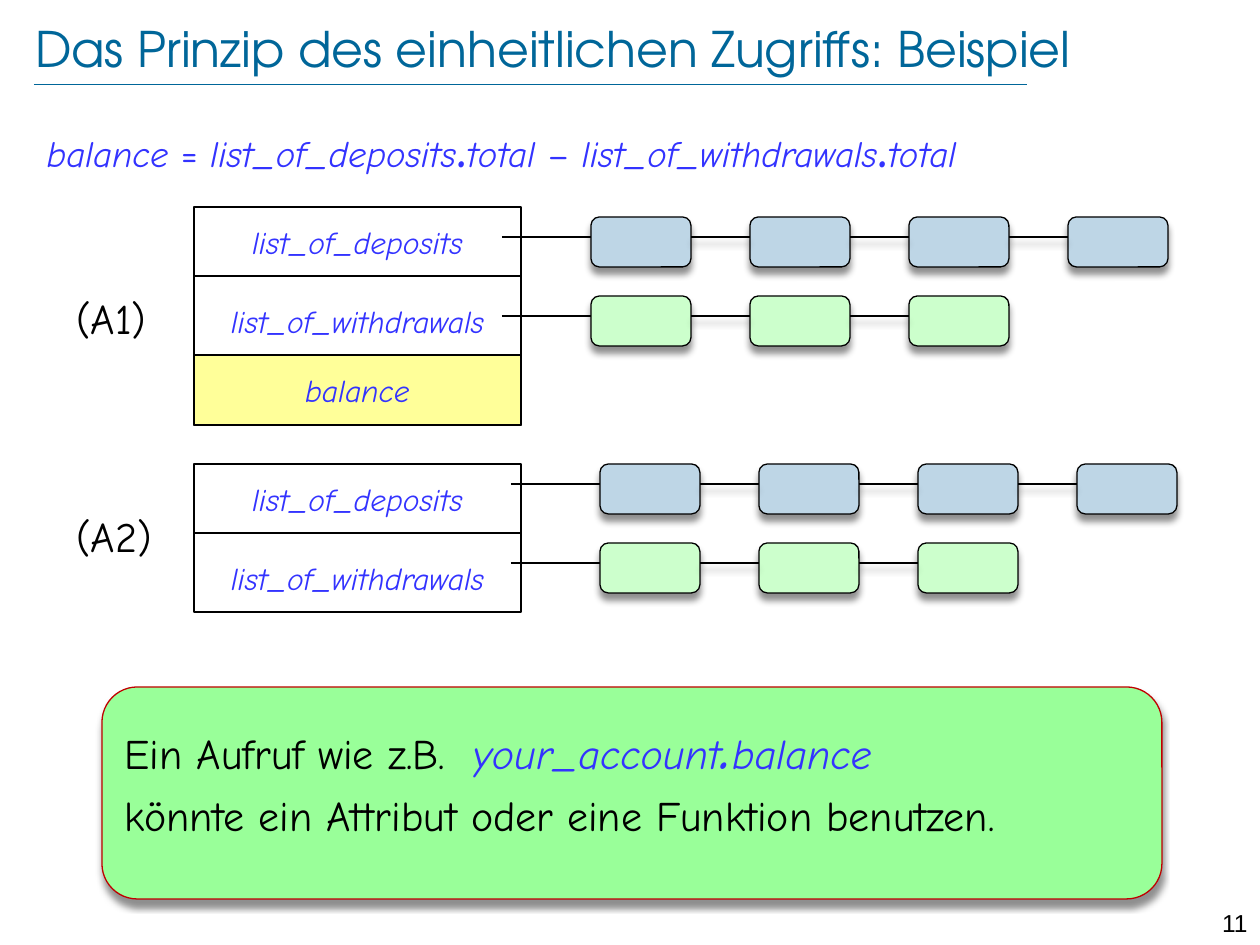
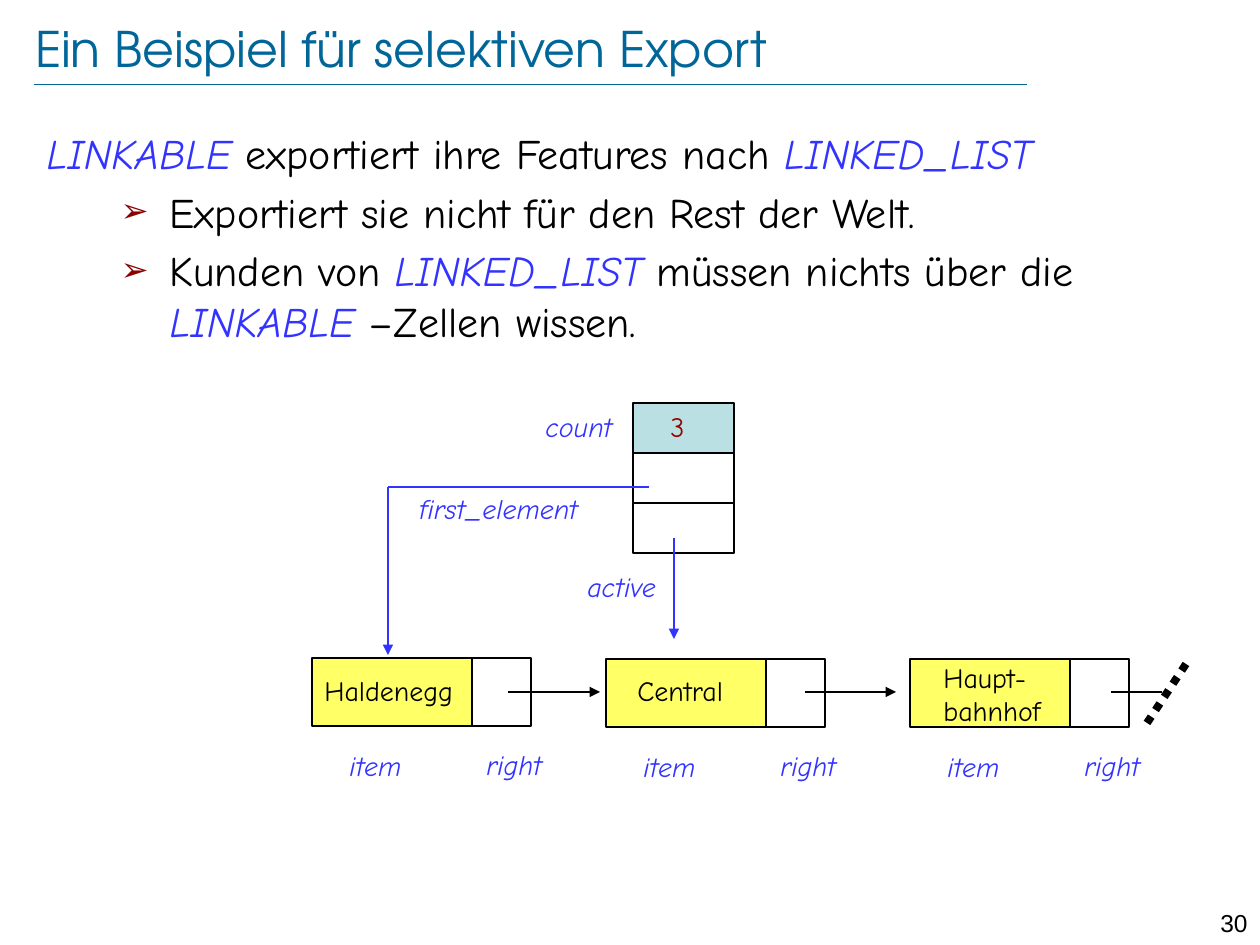
from dataclasses import dataclass, replace

from lxml import etree
from pptx import Presentation
from pptx.dml.color import RGBColor
from pptx.enum.dml import MSO_LINE
from pptx.enum.shapes import MSO_CONNECTOR, MSO_SHAPE
from pptx.enum.text import MSO_ANCHOR, MSO_AUTO_SIZE, PP_ALIGN
from pptx.oxml.ns import qn
from pptx.util import Emu, Pt

LEFT, CENTER, RIGHT = PP_ALIGN.LEFT, PP_ALIGN.CENTER, PP_ALIGN.RIGHT
TOP, MIDDLE = MSO_ANCHOR.TOP, MSO_ANCHOR.MIDDLE
RECTANGLE, ROUNDED = MSO_SHAPE.RECTANGLE, MSO_SHAPE.ROUNDED_RECTANGLE
STRAIGHT, DOTS, NO_FIT = MSO_CONNECTOR.STRAIGHT, MSO_LINE.ROUND_DOT, MSO_AUTO_SIZE.NONE
PX_PER_INCH = 126


@dataclass(frozen=True)
class Theme:
    heading_font: str = "TeX Gyre Adventor"
    text_font: str = "Comic Neue"
    number_font: str = "Arial"
    heading: str = "006699"
    text: str = "000000"
    code: str = "3333FF"
    bullet: str = "8B0000"
    value: str = "990000"
    deposit: str = "BED6E6"
    withdrawal: str = "CCFFCC"
    balance: str = "FFFF99"
    callout: str = "99FF99"
    callout_line: str = "C00000"
    counter: str = "BBE0E3"
    item: str = "FFFF66"
    heading_size: int = 28
    body_size: int = 24
    formula_size: int = 21
    field_size: int = 18
    label_size: int = 16
    number_size: int = 14
    line_width: float = 0.75


THEME = Theme()


@dataclass(frozen=True)
class Area:
    left: int
    top: int
    width: int
    height: int


@dataclass(frozen=True)
class Span:
    text: str
    size: int = THEME.body_size
    color: str = THEME.text
    italic: bool = False
    font: str = THEME.text_font


@dataclass(frozen=True)
class Para:
    spans: list[Span]
    align: PP_ALIGN = LEFT
    line_spacing: float = 1.0
    space_before: float = 0
    bullet: str = ""


@dataclass(frozen=True)
class Node:
    """A list cell with its name and the link that leaves it."""
    name: str
    left: int
    top: int
    name_left: int
    name_top: int
    link_start: int
    link_end: int
    arrow: bool = True


TITLE_AREA = Area(35, 16, 1135, 63)
BODY_AREA = Area(34, 121, 1184, 777)
NUMBER_AREA = Area(1191, 902, 69, 30)

# Account records: offsets of each row and its text from the frame top
FIELDS = [("list_of_deposits", 0, 10), ("list_of_withdrawals", 69, 89), ("balance", 148, 158)]
RECORD_LEFT, RECORD_WIDTH, LAST_ROW = 194, 327, 70
CHAINS = [(THEME.deposit, 4), (THEME.withdrawal, 3)]
CELL_WIDTH, CELL_HEIGHT, CELL_STEP, CHAIN_STEP = 100, 50, 159, 79

NODES = [
    Node("Haldenegg", 312, 658, 312, 667, 508, 600),
    Node("Central", 606, 659, 625, 667, 805, 896),
    Node("Haupt-\nbahnhof", 910, 659, 931, 654, 1111, 1162, arrow=False),
]
ITEM_WIDTH, RIGHT_WIDTH, NODE_HEIGHT, LINK_Y = 160, 59, 68, 692


def px(length: int) -> Emu:
    return Emu(round(length * 914400 / PX_PER_INCH))


def rgb(color: str) -> RGBColor:
    return RGBColor.from_string(color)


def code(text: str, size: int = THEME.body_size) -> Span:
    return Span(text, size, THEME.code, italic=True)


def place(shape, area: Area) -> None:
    shape.left, shape.top = px(area.left), px(area.top)
    shape.width, shape.height = px(area.width), px(area.height)


def add_bullet(paragraph, mark: str) -> None:
    """Give a paragraph a coloured bullet, or none if the mark is empty."""
    properties = paragraph._p.get_or_add_pPr()
    properties.set("marL", str(px(123) if mark else 0))
    properties.set("indent", str(px(-49) if mark else 0))
    if not mark:
        etree.SubElement(properties, qn("a:buNone"))
        return
    paragraph.level = 1
    color = etree.SubElement(properties, qn("a:buClr"))
    etree.SubElement(color, qn("a:srgbClr"), val=THEME.bullet)
    etree.SubElement(properties, qn("a:buSzPct"), val="80000")
    etree.SubElement(properties, qn("a:buChar"), char=mark)


def fill_text(shape, paras: list[Para], anchor: MSO_ANCHOR = TOP) -> None:
    frame = shape.text_frame
    frame.word_wrap = True
    frame.auto_size = NO_FIT
    frame.vertical_anchor = anchor
    for index, para in enumerate(paras):
        paragraph = frame.add_paragraph() if index else frame.paragraphs[0]
        add_bullet(paragraph, para.bullet)
        paragraph.alignment = para.align
        paragraph.line_spacing = para.line_spacing
        paragraph.space_before = Pt(para.space_before)
        for span in para.spans:
            for number, piece in enumerate(span.text.split("\n")):
                if number:
                    paragraph.add_line_break()
                run = paragraph.add_run()
                run.text = piece
                font = run.font
                font.name, font.size = span.font, Pt(span.size)
                font.italic, font.color.rgb = span.italic, rgb(span.color)


def add_text(page, area: Area, span: Span, align: PP_ALIGN = LEFT) -> None:
    box = page.shapes.add_textbox(0, 0, 0, 0)
    place(box, area)
    fill_text(box, [Para([span], align)])


def set_shadow(shape, visible: bool) -> None:
    """Replace the theme shadow; call after fill and line are set."""
    effects = etree.SubElement(shape._element.spPr, qn("a:effectLst"))
    if visible:
        shadow = etree.SubElement(effects, qn("a:outerShdw"), blurRad=str(Pt(4)),
                                  dist=str(Pt(4)), dir="5400000", algn="t", rotWithShape="0")
        color = etree.SubElement(shadow, qn("a:srgbClr"), val="000000")
        etree.SubElement(color, qn("a:alpha"), val="43000")


def add_box(page, area: Area, fill: str = "", line: str = THEME.text,
            kind: MSO_SHAPE = RECTANGLE, shadow: bool = False):
    box = page.shapes.add_shape(kind, 0, 0, 0, 0)
    place(box, area)
    if fill:
        box.fill.solid()
        box.fill.fore_color.rgb = rgb(fill)
    else:
        box.fill.background()
    box.line.color.rgb = rgb(line)
    box.line.width = Pt(THEME.line_width)
    set_shadow(box, shadow)
    return box


def add_line(page, start: tuple[int, int], end: tuple[int, int], color: str = THEME.text,
             width: float = THEME.line_width, arrow: bool = False,
             dotted: bool = False, shadow: bool = False) -> None:
    line = page.shapes.add_connector(STRAIGHT, *map(px, start + end))
    line.line.color.rgb = rgb(color)
    line.line.width = Pt(width)
    if dotted:
        line.line.dash_style = DOTS
    if arrow:
        etree.SubElement(line.line._get_or_add_ln(), qn("a:tailEnd"), type="triangle")
    set_shadow(line, shadow)


def start_page(deck, title: str, number: int, body: list[Para]):
    """Add a slide with the shared title, rule, number and body."""
    page = deck.slides.add_slide(deck.slide_layouts[1])
    heading, content = page.placeholders[0], page.placeholders[1]
    place(heading, TITLE_AREA)
    frame = heading.text_frame
    frame.margin_left = frame.margin_right = frame.margin_top = frame.margin_bottom = 0
    title_span = Span(title, THEME.heading_size, THEME.heading, font=THEME.heading_font)
    fill_text(heading, [Para([title_span])], MIDDLE)
    place(content, BODY_AREA)
    fill_text(content, body)
    add_line(page, (34, 84), (1027, 84), THEME.heading, 0.25)
    add_text(page, NUMBER_AREA, Span(str(number), THEME.number_size, font=THEME.number_font), RIGHT)
    return page


def add_record(page, top: int, row_count: int) -> None:
    """Draw an account record with one row per field."""
    rows = FIELDS[:row_count]
    height = FIELDS[row_count][1] if row_count < len(FIELDS) else rows[-1][1] + LAST_ROW
    for name, offset, _ in rows:
        if name == "balance":
            add_box(page, Area(RECORD_LEFT, top + offset, RECORD_WIDTH, LAST_ROW), THEME.balance)
    add_box(page, Area(RECORD_LEFT, top, RECORD_WIDTH, height))
    for name, offset, text_offset in rows:
        if offset:
            y = top + offset
            add_line(page, (RECORD_LEFT, y), (RECORD_LEFT + RECORD_WIDTH, y))
        add_text(page, Area(RECORD_LEFT, top + text_offset, RECORD_WIDTH, 50),
                 code(name, THEME.field_size), CENTER)


def add_chains(page, left: int, top: int) -> None:
    """Draw the linked cells of deposits and withdrawals."""
    for row, (color, count) in enumerate(CHAINS):
        row_top = top + row * CHAIN_STEP
        link_y = row_top + 20
        for column in range(count):
            x = left + column * CELL_STEP
            add_box(page, Area(x, row_top, CELL_WIDTH, CELL_HEIGHT), color,
                    kind=ROUNDED, shadow=True)
            link_start = x - CELL_STEP + CELL_WIDTH if column else x - 89
            add_line(page, (link_start, link_y), (x, link_y), shadow=column > 0)


def build_access_page(deck) -> None:
    size = THEME.formula_size
    dot = Span(".", 40, THEME.code)
    plain = Span("", size, THEME.code)
    formula = [code("balance", size), replace(plain, text=" = "),
               code("list_of_deposits", size), dot, code("total", size),
               replace(plain, text=" – "),
               code("list_of_withdrawals", size), dot, code("total", size)]
    page = start_page(deck, "Das Prinzip des einheitlichen Zugriffs: Beispiel", 11,
                      [Para(formula, line_spacing=0.6)])
    # The two representations
    add_record(page, 207, 3)
    add_record(page, 464, 2)
    add_text(page, Area(64, 286, 106, 63), Span("(A1)"))
    add_text(page, Area(64, 504, 129, 63), Span("(A2)"))
    add_chains(page, 591, 217)
    add_chains(page, 600, 464)
    # Conclusion
    callout = add_box(page, Area(102, 687, 1060, 212), THEME.callout, THEME.callout_line,
                      ROUNDED, shadow=True)
    fill_text(callout, [
        Para([Span("Ein Aufruf wie z.B.  "), code("your_account"), code(".", 44),
              code("balance")], line_spacing=0.9),
        Para([Span("könnte ein Attribut oder eine Funktion benutzen.")],
             line_spacing=0.9, space_before=4.8),
    ])


def build_export_page(deck) -> None:
    page = start_page(deck, "Ein Beispiel für selektiven Export", 30, [
        Para([code("LINKABLE"), Span(" exportiert ihre Features nach "), code("LINKED_LIST")]),
        Para([Span("Exportiert sie nicht für den Rest der Welt.")], space_before=4.8, bullet="➢"),
        Para([Span("Kunden von "), code("LINKED_LIST"), Span(" müssen nichts über die "),
              code("LINKABLE"), Span(" –Zellen wissen.")], space_before=4.8, bullet="➢"),
    ])
    size = THEME.label_size
    # List header
    for row, fill in enumerate([THEME.counter, "", ""]):
        add_box(page, Area(633, 403 + row * 50, 101, 50), fill)
    add_text(page, Area(658, 403, 110, 47), Span("3", size, THEME.value))
    for name, left, top, width in [("count", 533, 403, 110), ("first_element", 407, 485, 295),
                                   ("active", 575, 563, 110)]:
        add_text(page, Area(left, top, width, 47), code(name, size))
    add_line(page, (674, 538), (674, 639), THEME.code, arrow=True)
    add_line(page, (649, 487), (388, 487), THEME.code)
    add_line(page, (388, 487), (388, 655), THEME.code, arrow=True)
    # Linked cells
    for node in NODES:
        right_left = node.left + ITEM_WIDTH
        add_box(page, Area(node.left, node.top, ITEM_WIDTH, NODE_HEIGHT), THEME.item)
        add_box(page, Area(right_left, node.top, RIGHT_WIDTH, NODE_HEIGHT))
        add_text(page, Area(node.name_left, node.name_top, 169, 47 + 34 * node.name.count("\n")),
                 Span(node.name, size))
        add_text(page, Area(node.left + 25, node.top + 84, 84, 47), code("item", size))
        add_text(page, Area(right_left + 2, node.top + 83, 113, 47), code("right", size))
        add_line(page, (node.link_start, LINK_Y), (node.link_end, LINK_Y), arrow=node.arrow)
    add_line(page, (1186, 664), (1147, 723), width=4.5, dotted=True)


def main() -> None:
    deck = Presentation()
    deck.slide_width, deck.slide_height = px(1260), px(945)
    build_access_page(deck)
    build_export_page(deck)
    deck.save("out.pptx")


if __name__ == "__main__":
    main()
